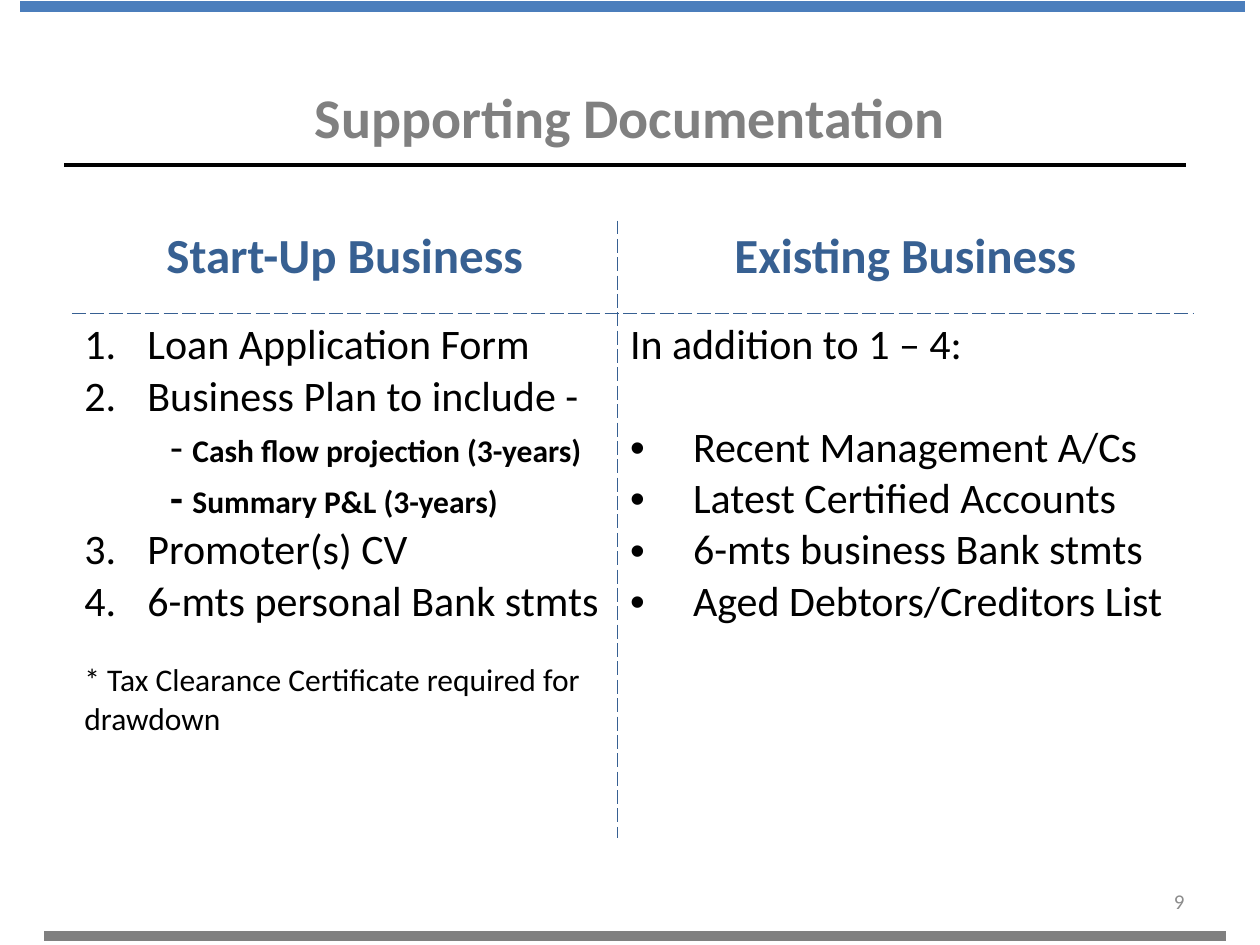
from lxml import etree
from pptx import Presentation
from pptx.dml.color import RGBColor
from pptx.enum.shapes import MSO_CONNECTOR
from pptx.enum.text import MSO_ANCHOR, PP_ALIGN
from pptx.oxml.ns import qn
from pptx.util import Inches, Pt

STRAIGHT = MSO_CONNECTOR.STRAIGHT
MIDDLE = MSO_ANCHOR.MIDDLE
LEFT, CENTER, RIGHT = PP_ALIGN.LEFT, PP_ALIGN.CENTER, PP_ALIGN.RIGHT
FONT = "Calibri"
NO_TABLE_STYLE = "{2D5ABB26-0587-4C30-8999-92F81FD0307C}"
COLORS = {"gray": "808080", "number": "8C8C8C", "bar": "4B7EBC",
          "heading": "376092", "text": "000000"}

# text, (left, top, width, height), alignment, size, color, bold
TEXTS = [
    ("Supporting Documentation", (0.5, 0.3, 9, 1.25), CENTER, 32, "gray", True),
    ("9", (7.17, 6.95, 2.33, 0.4), RIGHT, 12, "number", False),
]
# start x, end x, y, color, width
RULES = [
    (0.16, 9.88, 0.05, "bar", 6),
    (0.51, 9.41, 1.31, "text", 2.25),
    (0.35, 9.73, 7.43, "gray", 6),
]

TABLE_AT = (0.57, 1.75)
COLUMN_WIDTHS = (4.33, 4.57)
ROW_HEIGHTS = (0.74, 4.16)
HEADINGS = ["Start-Up Business", "Existing Business"]
# kind, first number, runs of (text, size, bold)
LISTS = [
    [
        ("number", 1, [("Loan Application Form", 24, False)]),
        ("number", 1, [("Business Plan to include -", 24, False)]),
        ("sub", None, [("- ", 24, False),
                       ("Cash flow projection (3-years)", 18, True)]),
        ("sub", None, [("- ", 24, True), ("Summary P&L (3-years)", 18, True)]),
        ("number", 3, [("Promoter(s) CV", 24, False)]),
        ("number", 3, [("6-mts personal Bank stmts", 24, False)]),
        ("note", None, [("* Tax Clearance Certificate required for drawdown",
                         18, False)]),
    ],
    [("lead", None, [("In addition to 1 – 4:", 24, False)])] + [
        ("bullet", None, [(text, 24, False)]) for text in (
            "Recent Management A/Cs", "Latest Certified Accounts",
            "6-mts business Bank stmts", "Aged Debtors/Creditors List")
    ],
]
SPACING = {"note": {"space_before": Pt(19.5)}, "lead": {"space_after": Pt(29.3)}}
INDENTS = {"number": (0.5, -0.5), "bullet": (0.5, -0.5), "sub": (0.68, 0)}


def add_run(paragraph, text, size, color, bold):
    run = paragraph.add_run()
    run.text = text
    for name, value in {"name": FONT, "size": Pt(size), "bold": bold}.items():
        setattr(run.font, name, value)
    run.font.color.rgb = RGBColor.from_string(COLORS[color])


def add_text(slide, text, box, alignment, size, color, bold):
    frame = slide.shapes.add_textbox(*map(Inches, box)).text_frame
    frame.word_wrap = True
    frame.vertical_anchor = MIDDLE
    frame.paragraphs[0].alignment = alignment
    add_run(frame.paragraphs[0], text, size, color, bold)


def add_rule(slide, start, end, y, color, width):
    line = slide.shapes.add_connector(
        STRAIGHT, Inches(start), Inches(y), Inches(end), Inches(y))
    line.line.color.rgb = RGBColor.from_string(COLORS[color])
    line.line.width = Pt(width)
    etree.SubElement(line._element.spPr, qn("a:effectLst"))


def set_list_format(paragraph, kind, start):
    properties = paragraph._p.get_or_add_pPr()
    if kind in INDENTS:
        for name, value in zip(("marL", "indent"), INDENTS[kind]):
            properties.set(name, str(Inches(value)))
    if kind == "number":
        number = etree.SubElement(properties, qn("a:buAutoNum"), type="arabicPeriod")
        if start > 1:
            number.set("startAt", str(start))
    elif kind == "bullet":
        etree.SubElement(properties, qn("a:buFont"), typeface="Arial")
        etree.SubElement(properties, qn("a:buChar"), char="•")


def add_dashed_borders(cell, sides):
    properties = cell._tc.get_or_add_tcPr()
    for side in sides:
        border = etree.SubElement(properties, qn(f"a:ln{side}"), w=str(Pt(1)))
        fill = etree.SubElement(border, qn("a:solidFill"))
        etree.SubElement(fill, qn("a:srgbClr"), val=COLORS["heading"])
        etree.SubElement(border, qn("a:prstDash"), val="dash")


def fill_list(cell, items):
    frame = cell.text_frame
    for index, (kind, start, runs) in enumerate(items):
        paragraph = frame.add_paragraph() if index else frame.paragraphs[0]
        paragraph.alignment = LEFT
        for name, value in SPACING.get(kind, {}).items():
            setattr(paragraph, name, value)
        set_list_format(paragraph, kind, start)
        for text, size, bold in runs:
            add_run(paragraph, text, size, "text", bold)


def add_document_table(slide):
    size = (sum(COLUMN_WIDTHS), sum(ROW_HEIGHTS))
    table = slide.shapes.add_table(2, 2, *map(Inches, TABLE_AT + size)).table
    table.first_row = table.horz_banding = False
    table._tbl.tblPr.find(qn("a:tableStyleId")).text = NO_TABLE_STYLE
    for row, height in zip(table.rows, ROW_HEIGHTS):
        row.height = Inches(height)
    for index, (heading, items) in enumerate(zip(HEADINGS, LISTS)):
        table.columns[index].width = Inches(COLUMN_WIDTHS[index])
        top, bottom = table.cell(0, index), table.cell(1, index)
        paragraph = top.text_frame.paragraphs[0]
        paragraph.alignment = CENTER
        add_run(paragraph, heading, 28, "heading", True)
        fill_list(bottom, items)
        inner_side = "RL"[index]
        add_dashed_borders(top, inner_side + "B")
        add_dashed_borders(bottom, inner_side + "T")
        for cell in (top, bottom):
            cell.fill.background()


def main():
    presentation = Presentation()
    presentation.slide_width = Inches(10)
    presentation.slide_height = Inches(7.5)
    slide = presentation.slides.add_slide(presentation.slide_layouts[6])
    for text in TEXTS:
        add_text(slide, *text)
    for rule in RULES:
        add_rule(slide, *rule)
    add_document_table(slide)
    presentation.save("out.pptx")


if __name__ == "__main__":
    main()
